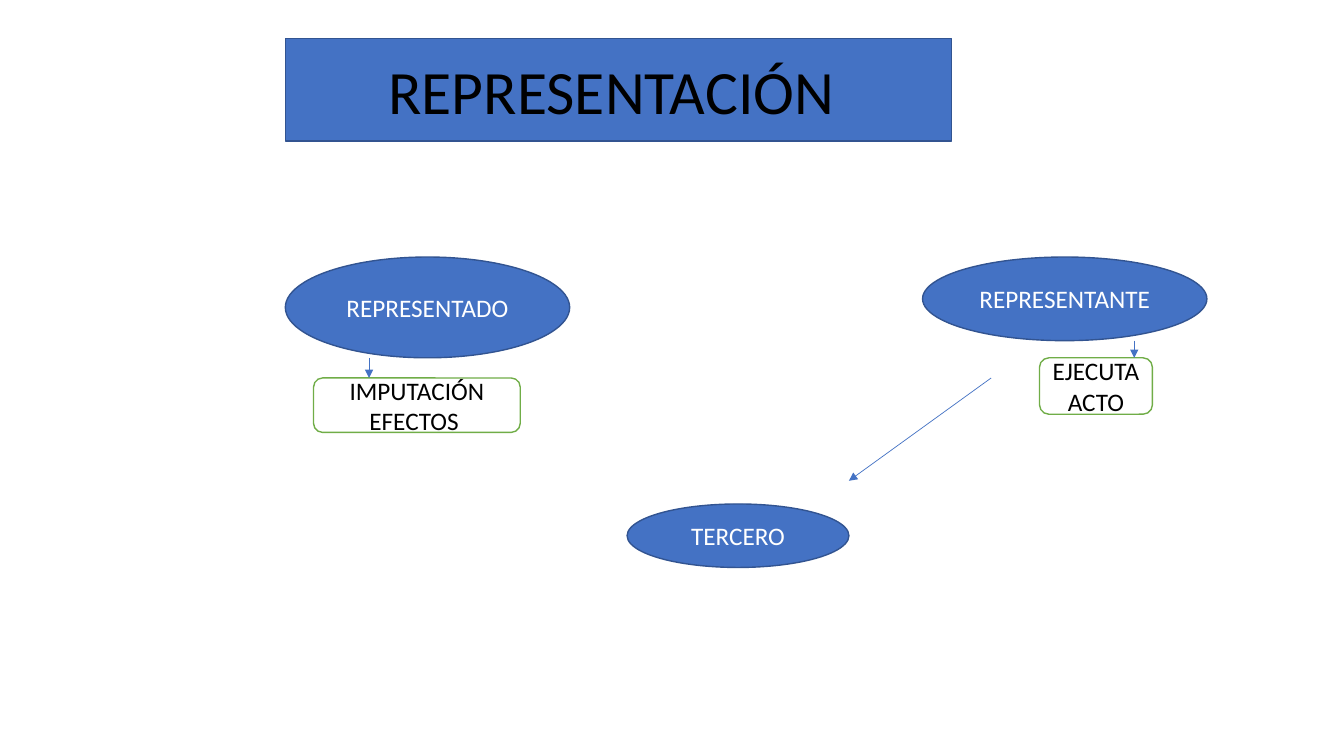
import pptx
import pptx.util
import pptx.dml.color
import pptx.enum.shapes
import pptx.enum.text
import pptx.oxml.ns
import pptx.oxml.xmlchemy
from pptx.util import Inches

BLUE = pptx.dml.color.RGBColor(0x44, 0x72, 0xC4)
DARK_BLUE = pptx.dml.color.RGBColor(0x32, 0x54, 0x91)
GREEN = pptx.dml.color.RGBColor(0x70, 0xAD, 0x47)
WHITE = pptx.dml.color.RGBColor(0xFF, 0xFF, 0xFF)
BLACK = pptx.dml.color.RGBColor(0x00, 0x00, 0x00)


def format_box(box, text, fill, outline, color, size=18):
    """Fill and outline a box and centre its text."""
    box.fill.solid()
    box.fill.fore_color.rgb = fill
    box.line.color.rgb = outline
    box.line.width = pptx.util.Pt(1)
    frame = box.text_frame
    frame.text = text
    frame.word_wrap = True
    frame.auto_size = pptx.enum.text.MSO_AUTO_SIZE.NONE
    frame.vertical_anchor = pptx.enum.text.MSO_ANCHOR.MIDDLE
    paragraph = frame.paragraphs[0]
    paragraph.alignment = pptx.enum.text.PP_ALIGN.CENTER
    paragraph.font.name = "Calibri"
    paragraph.font.size = pptx.util.Pt(size)
    paragraph.font.color.rgb = color


def set_title(slide, text, left, top, width, height):
    """Place the slide title in a blue banner."""
    title = slide.shapes.title
    title.left, title.top = Inches(left), Inches(top)
    title.width, title.height = Inches(width), Inches(height)
    format_box(title, text, BLUE, DARK_BLUE, BLACK, 44)


def add_party(slide, text, left, top, width, height):
    """Add a blue ellipse naming one of the parties."""
    party = slide.shapes.add_shape(
        pptx.enum.shapes.MSO_SHAPE.OVAL,
        Inches(left), Inches(top), Inches(width), Inches(height))
    party.shadow.inherit = False
    format_box(party, text, BLUE, DARK_BLUE, WHITE)


def add_role(slide, text, left, top, width, height):
    """Add a green-outlined box with the role of a party."""
    role = slide.shapes.add_shape(
        pptx.enum.shapes.MSO_SHAPE.ROUNDED_RECTANGLE,
        Inches(left), Inches(top), Inches(width), Inches(height))
    role.shadow.inherit = False
    format_box(role, text, WHITE, GREEN, BLACK)


def add_arrow(slide, start_x, start_y, end_x, end_y):
    """Add a thin blue arrow between two points."""
    arrow = slide.shapes.add_connector(
        pptx.enum.shapes.MSO_CONNECTOR.STRAIGHT,
        Inches(start_x), Inches(start_y), Inches(end_x), Inches(end_y))
    arrow.line.color.rgb = BLUE
    arrow.line.width = pptx.util.Pt(0.5)
    head = pptx.oxml.xmlchemy.OxmlElement("a:tailEnd")
    head.set("type", "triangle")
    properties = arrow.element.spPr
    properties.find(pptx.oxml.ns.qn("a:ln")).append(head)
    properties.append(pptx.oxml.xmlchemy.OxmlElement("a:effectLst"))


def main():
    """Build the diagram of representation and save it."""
    presentation = pptx.Presentation()
    presentation.slide_width = Inches(13.33)
    presentation.slide_height = Inches(7.5)
    slide = presentation.slides.add_slide(presentation.slide_layouts[5])

    set_title(slide, "REPRESENTACIÓN ", 2.83, 0.38, 6.61, 1.02)
    add_party(slide, "REPRESENTADO", 2.83, 2.55, 2.82, 1)
    add_party(slide, "REPRESENTANTE", 9.15, 2.55, 2.82, 0.83)
    add_party(slide, "TERCERO", 6.22, 5, 2.2, 0.63)
    add_role(slide, "EJECUTA ACTO", 10.31, 3.55, 1.12, 0.56)
    add_role(slide, "IMPUTACIÓN EFECTOS ", 3.11, 3.75, 2.05, 0.54)
    add_arrow(slide, 9.83, 3.75, 8.42, 4.77)
    add_arrow(slide, 11.25, 3.38, 11.25, 3.55)
    add_arrow(slide, 3.66, 3.55, 3.66, 3.75)

    presentation.save("out.pptx")


if __name__ == "__main__":
    main()
